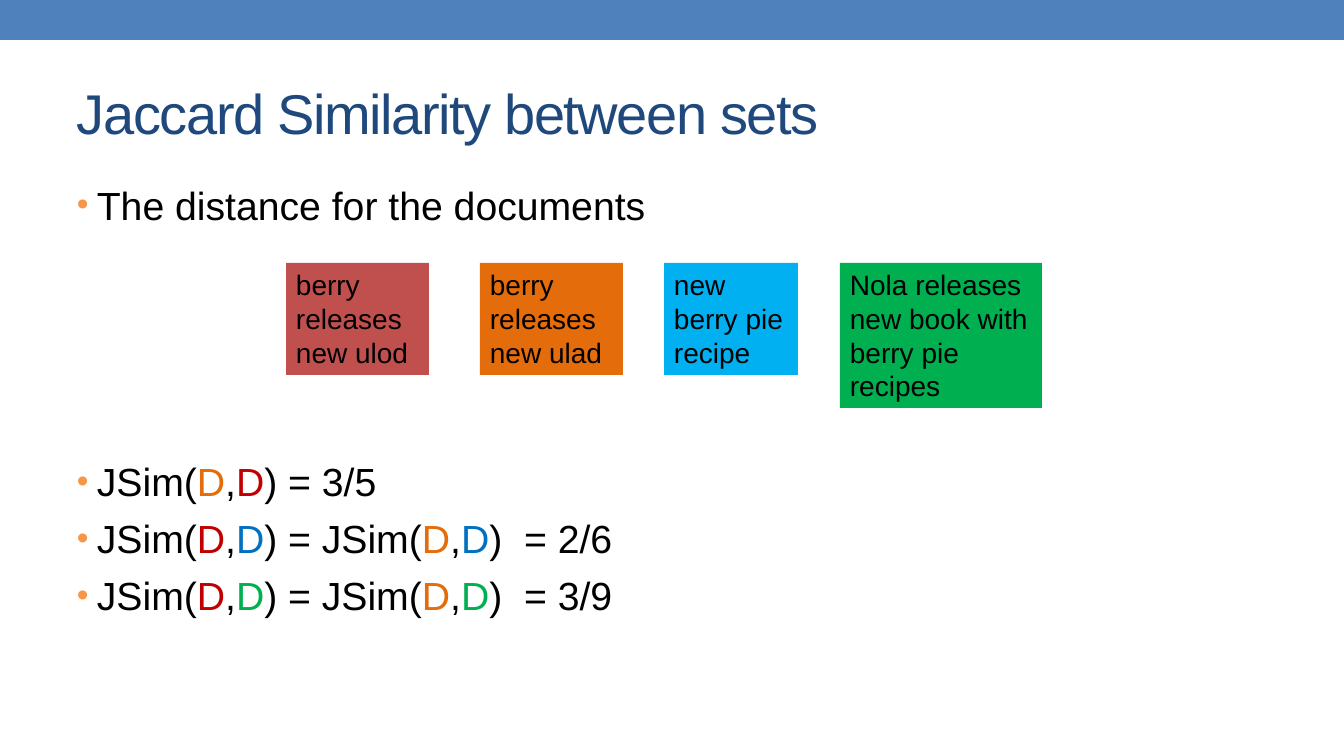
import dataclasses

import pptx
import pptx.dml.color
import pptx.enum.shapes
import pptx.enum.text
import pptx.oxml
import pptx.oxml.ns
import pptx.util


@dataclasses.dataclass(frozen=True)
class Theme:
    font: str = "Arial"
    title_size: int = 40
    body_size: int = 28
    card_size: int = 20
    band: str = "4F81BD"
    title: str = "1F497D"
    text: str = "000000"
    bullet: str = "F79646"
    red_card: str = "C0504D"
    red: str = "C00000"
    orange: str = "E46C0A"
    sky_card: str = "00B0F0"
    blue: str = "0070C0"
    green: str = "00B050"


THEME = Theme()
EMU_PER_PX = 914400 / 100.8


def px(length):
    return pptx.util.Emu(round(length * EMU_PER_PX))


def rgb(value):
    return pptx.dml.color.RGBColor.from_string(value)


def add_span(para, text, *, size, color, spacing=None):
    span = para.add_run()
    span.text = text
    span.font.name = THEME.font
    span.font.size = pptx.util.Pt(size)
    span.font.color.rgb = rgb(color)
    if spacing is not None:
        span._r.get_or_add_rPr().set("spc", str(spacing))


class SlideBuilder:
    """Draws styled elements on the current slide."""

    def __init__(self, page, theme):
        self.page = page
        self.theme = theme

    def rectangle(self, left, top, width, height, fill):
        box = self.page.shapes.add_shape(
            pptx.enum.shapes.MSO_SHAPE.RECTANGLE,
            px(left), px(top), px(width), px(height))
        box.shadow.inherit = False
        box.fill.solid()
        box.fill.fore_color.rgb = rgb(fill)
        box.line.fill.background()
        return box

    def card(self, left, top, width, height, fill, text):
        box = self.rectangle(left, top, width, height, fill)
        frame = box.text_frame
        frame.word_wrap = True
        frame.vertical_anchor = pptx.enum.text.MSO_ANCHOR.TOP
        para = frame.paragraphs[0]
        para.alignment = pptx.enum.text.PP_ALIGN.LEFT
        add_span(para, text, size=self.theme.card_size, color=self.theme.text)

    def text_frame(self, left, top, width, height, anchor):
        box = self.page.shapes.add_textbox(px(left), px(top), px(width), px(height))
        box.text_frame.word_wrap = True
        box.text_frame.vertical_anchor = anchor
        return box.text_frame

    def title(self, left, top, width, height, text):
        frame = self.text_frame(left, top, width, height,
                                pptx.enum.text.MSO_ANCHOR.MIDDLE)
        add_span(frame.paragraphs[0], text, size=self.theme.title_size,
                 color=self.theme.title, spacing=-100)

    def bullets(self, left, top, width, height, items):
        frame = self.text_frame(left, top, width, height,
                                pptx.enum.text.MSO_ANCHOR.TOP)
        for index, (gap, spans) in enumerate(items):
            para = frame.add_paragraph() if index else frame.paragraphs[0]
            para.space_before = pptx.util.Pt(gap)
            self.mark_bullet(para)
            for text, color in spans:
                add_span(para, text, size=self.theme.body_size, color=color)

    def mark_bullet(self, para):
        properties = para._p.get_or_add_pPr()
        properties.set("marL", str(px(20)))
        properties.set("indent", str(px(-20)))
        namespace = pptx.oxml.ns.nsdecls("a")
        for markup in (
            f'<a:buClr {namespace}><a:srgbClr val="{self.theme.bullet}"/></a:buClr>',
            f'<a:buSzPct {namespace} val="85000"/>',
            f'<a:buFont {namespace} typeface="{self.theme.font}"/>',
            f'<a:buChar {namespace} char="•"/>',
        ):
            properties.append(pptx.oxml.parse_xml(markup))


def similarity(pairs, value):
    spans = []
    for index, (first, second) in enumerate(pairs):
        spans += [(") = JSim(" if index else "JSim(", THEME.text), ("D", first),
                  (",", THEME.text), ("D", second)]
    return spans + [(value, THEME.text)]


def main():
    deck = pptx.Presentation()
    deck.slide_width, deck.slide_height = px(1344), px(756)
    builder = SlideBuilder(deck.slides.add_slide(deck.slide_layouts[6]), THEME)

    builder.rectangle(0, 0, 1344, 40, THEME.band)
    builder.title(67, 58, 1210, 109, "Jaccard Similarity between sets")

    red, orange, blue, green = THEME.red, THEME.orange, THEME.blue, THEME.green
    line_gap, card_gap = 7, 164
    builder.bullets(67, 176, 1210, 538, [
        (line_gap, [("The distance for the documents", THEME.text)]),
        (card_gap, similarity([(orange, red)], ") = 3/5")),
        (line_gap, similarity([(red, blue), (orange, blue)], ")  = 2/6")),
        (line_gap, similarity([(red, green), (orange, green)], ")  = 3/9")),
    ])

    for left, width, height, fill, text in (
        (286, 143, 112, THEME.red_card, "berry releases new ulod"),
        (480, 143, 112, THEME.orange, "berry releases new ulad"),
        (664, 134, 112, THEME.sky_card, "new berry pie recipe"),
        (840, 202, 145, THEME.green, "Nola releases new book with berry pie recipes"),
    ):
        builder.card(left, 263, width, height, fill, text)

    deck.save("out.pptx")


if __name__ == "__main__":
    main()
